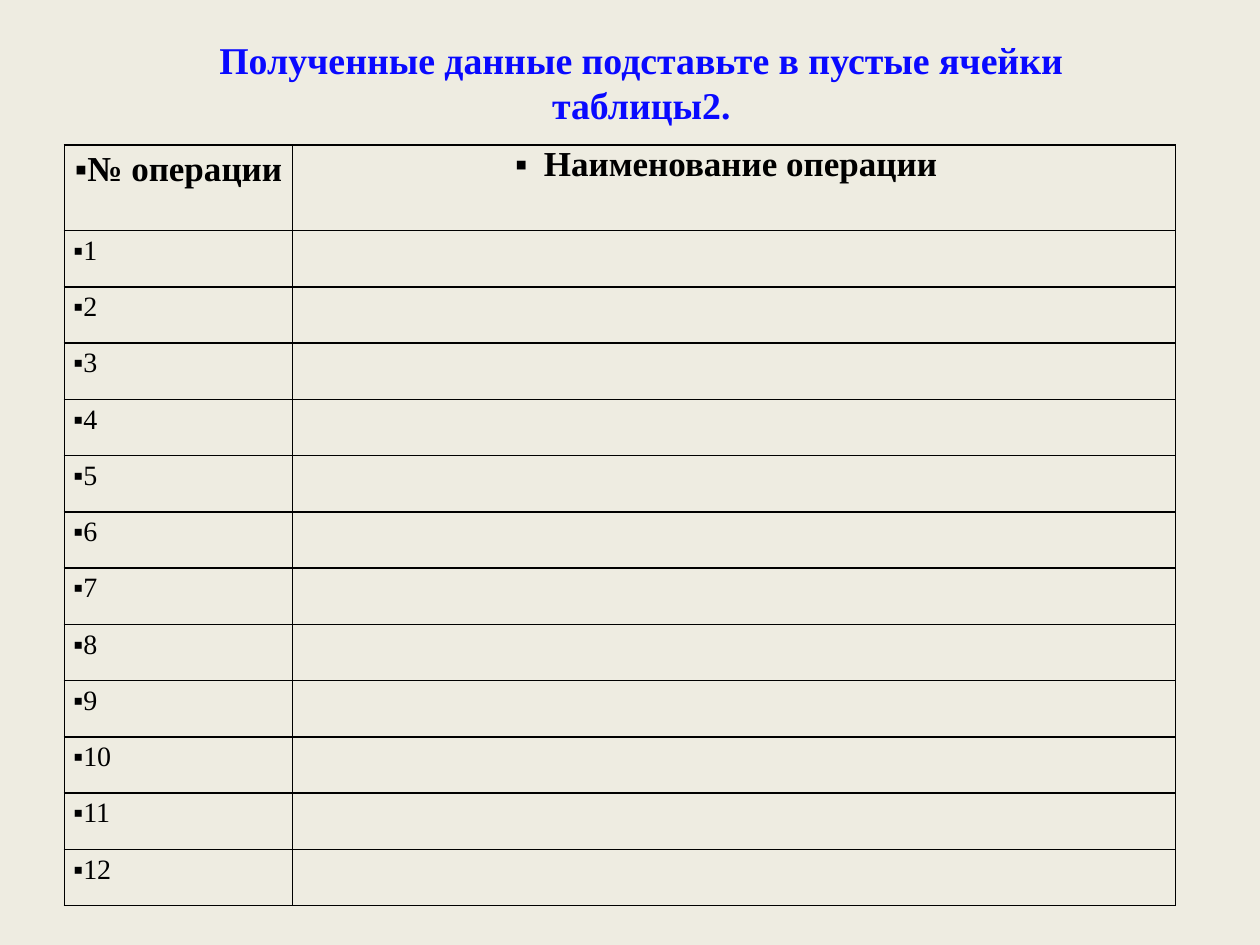
from dataclasses import dataclass

from lxml import etree
from pptx import Presentation
from pptx import util as u
from pptx.dml.color import RGBColor
from pptx.enum import text
from pptx.oxml import ns


@dataclass(frozen=True)
class Theme:
    paper: str = "EEECE1"
    ink: str = "000000"
    blue: str = "0909FF"
    font: str = "Times New Roman"
    title: float = 21.6
    head: float = 20
    body: float = 16
    rule: float = 1


def write(frame, words, size, color, font, bold=False, align="LEFT",
          line=None, mark=None, hang=0):
    frame.word_wrap = True
    para = frame.paragraphs[0]
    para.text = words
    para.alignment = getattr(text.PP_ALIGN, align)
    face = para.runs[0].font
    for run in para.runs:
        face = run.font
        face.name, face.size, face.bold = font, u.Pt(size), bold
        face.color.rgb = RGBColor.from_string(color)
    if line:
        para.line_spacing = line
    if mark:
        para.space_before = u.Pt(size * 0.2)
        props = para._p.get_or_add_pPr()
        props.set("marL", str(u.Cm(hang)))
        props.set("indent", str(-u.Cm(hang)))
        etree.SubElement(props, ns.qn("a:buFont"), typeface=font)
        etree.SubElement(props, ns.qn("a:buChar"), char=mark)


class Deck:
    """Builds one slide in a given theme."""

    def __init__(self, theme):
        self.theme = theme
        self.prs = Presentation()
        self.prs.slide_width, self.prs.slide_height = u.Cm(25.4), u.Cm(19.05)
        self.slide = self.prs.slides.add_slide(self.prs.slide_layouts[6])
        fill = self.slide.background.fill
        fill.solid()
        fill.fore_color.rgb = RGBColor.from_string(theme.paper)

    def title(self, words, x, y, w, h):
        frame = self.slide.shapes.add_textbox(*map(u.Cm, (x, y, w, h))).text_frame
        frame.margin_top = 0
        frame.vertical_anchor = text.MSO_ANCHOR.TOP
        write(frame, words, self.theme.title, self.theme.blue,
              self.theme.font, bold=True, align="CENTER")

    def border(self, cell):
        props = cell._tc.get_or_add_tcPr()
        for spot, side in enumerate(("lnL", "lnR", "lnT", "lnB")):
            line = etree.Element(ns.qn(f"a:{side}"), w=str(u.Pt(self.theme.rule)))
            fill = etree.SubElement(line, ns.qn("a:solidFill"))
            etree.SubElement(fill, ns.qn("a:srgbClr"), val=self.theme.ink)
            props.insert(spot, line)

    def table(self, x, y, cols, head, row, count):
        size = sum(cols), head + row * count
        grid = self.slide.shapes.add_table(
            count + 1, len(cols), *map(u.Cm, (x, y, *size))).table
        grid.first_row = grid.horz_banding = False
        for col, wide in zip(grid.columns, cols):
            col.width = u.Cm(wide)
        for spot, band in enumerate(grid.rows):
            band.height = u.Cm(row if spot else head)
        for cell in grid.iter_cells():
            cell.margin_left = cell.margin_right = u.Cm(0.18)
            cell.margin_top = cell.margin_bottom = 0
            cell.fill.background()
            self.border(cell)
        return grid

    def entry(self, cell, words, size, **form):
        write(cell.text_frame, words, size, self.theme.ink,
              self.theme.font, mark="▪", **form)

    def save(self):
        self.prs.save("out.pptx")


def main():
    theme = Theme()
    deck = Deck(theme)
    deck.title("Полученные данные подставьте в пустые ячейки\vтаблицы2.",
               1.5, 0.74, 22.86, 4.6)
    count = 12
    grid = deck.table(1.3, 2.92, (4.6, 17.8), 1.73, 13.61 / count, count)
    deck.entry(grid.cell(0, 0), "№ операции", theme.head,
               bold=True, align="CENTER", line=1.15)
    name = grid.cell(0, 1)
    name.margin_right = u.Cm(0.5)
    deck.entry(name, "Наименование операции", theme.head,
               bold=True, align="CENTER", hang=0.58)
    for num in range(1, count + 1):
        deck.entry(grid.cell(num, 0), str(num), theme.body, line=1.15)
    deck.save()


if __name__ == "__main__":
    main()
